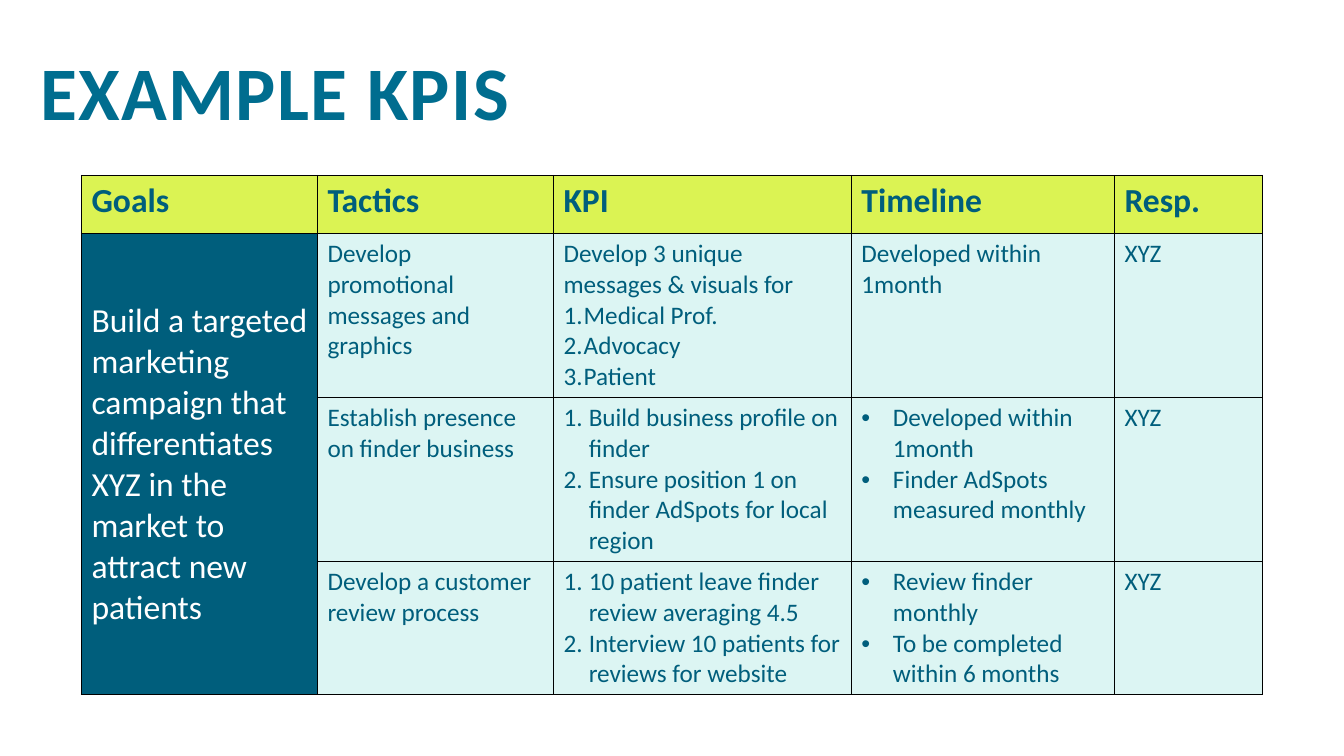
from lxml.etree import SubElement
from pptx import Presentation
from pptx.dml.color import RGBColor
from pptx.enum.text import MSO_ANCHOR as Anchor, MSO_AUTO_SIZE as AutoSize, PP_ALIGN as Align
from pptx.oxml import parse_xml
from pptx.oxml.ns import nsdecls, qn
from pptx.util import Pt

TEAL, DARK_TEAL, LIME, MINT, WHITE = "006D8F", "005E7C", "DBF353", "DCF5F3", "FFFFFF"
COLUMN_WIDTHS = [168.6, 168.6, 212.8, 187.9, 105.7]
ROW_HEIGHTS = [41.6, 117.1, 117.1, 95]
HEADINGS = ["Goals", "Tactics", "KPI", "Timeline", "Resp."]
GOAL = ("Build a targeted marketing campaign that differentiates XYZ "
        "in the market to attract new patients")


def color(value):
    return RGBColor.from_string(value)


def write(paragraph, text, size=18, fill=DARK_TEAL, bold=False, spacing=None):
    run = paragraph.add_run()
    run.text = text
    run.font.name = "Calibri"
    run.font.size = Pt(size)
    run.font.bold = bold
    run.font.color.rgb = color(fill)
    if spacing:
        run.font._element.set("spc", str(spacing * 100))


def add_marker(paragraph, indent, numbered):
    properties = paragraph._p.get_or_add_pPr()
    properties.set("marL", str(Pt(indent)))
    properties.set("indent", str(-Pt(indent)))
    SubElement(properties, qn("a:buFont"), typeface="+mj-lt" if numbered else "Arial")
    if numbered:
        SubElement(properties, qn("a:buAutoNum"), type="arabicPeriod")
    else:
        SubElement(properties, qn("a:buChar"), char="•")


def plain(*texts):
    return [(text, None, False) for text in texts]


def numbers(*texts, indent=18):
    return [(text, indent, True) for text in texts]


def bullets(*texts):
    return [(text, 22.5, False) for text in texts]


def add_borders(cell):
    properties = cell._tc.get_or_add_tcPr()
    for position, side in enumerate(["lnL", "lnR", "lnT", "lnB"]):
        properties.insert(position, parse_xml(
            f'<a:{side} {nsdecls("a")} w="{Pt(1)}"><a:solidFill>'
            f'<a:srgbClr val="000000"/></a:solidFill></a:{side}>'))


def fill_cell(cell, lines, background=MINT, **text_format):
    cell.fill.solid()
    cell.fill.fore_color.rgb = color(background)
    for index, (text, indent, numbered) in enumerate(lines):
        frame = cell.text_frame
        paragraph = frame.add_paragraph() if index else frame.paragraphs[0]
        if indent:
            add_marker(paragraph, indent, numbered)
        write(paragraph, text, **text_format)


def add_title(slide, text):
    title = slide.shapes.title
    title.left, title.top, title.width, title.height = Pt(21.6), Pt(11.5), Pt(765.4), Pt(118)
    frame = title.text_frame
    frame.word_wrap = True
    frame.auto_size = AutoSize.NONE
    frame.vertical_anchor = Anchor.MIDDLE
    paragraph = frame.paragraphs[0]
    paragraph.alignment = Align.LEFT
    paragraph.line_spacing = 0.8
    write(paragraph, text, size=54, fill=TEAL, bold=True, spacing=1)


def add_kpi_table(slide, rows):
    table = slide.shapes.add_table(
        len(ROW_HEIGHTS), len(COLUMN_WIDTHS), Pt(58.2), Pt(125.3),
        Pt(sum(COLUMN_WIDTHS)), Pt(sum(ROW_HEIGHTS))).table
    table.horz_banding = False
    for column, width in zip(table.columns, COLUMN_WIDTHS):
        column.width = Pt(width)
    for row, height in zip(table.rows, ROW_HEIGHTS):
        row.height = Pt(height)
    for column, heading in enumerate(HEADINGS):
        fill_cell(table.cell(0, column), plain(heading), LIME, size=24, bold=True)
    for row, entries in enumerate(rows, 1):
        for column, lines in enumerate(entries, 1):
            fill_cell(table.cell(row, column), lines)
    goal = table.cell(1, 0)
    goal.merge(table.cell(len(rows), 0))
    fill_cell(goal, plain(GOAL), DARK_TEAL, size=24, fill=WHITE)
    goal.vertical_anchor = Anchor.MIDDLE
    for cell in table.iter_cells():
        add_borders(cell)


def main():
    presentation = Presentation()
    presentation.slide_width, presentation.slide_height = Pt(960), Pt(540)
    slide = presentation.slides.add_slide(presentation.slide_layouts[5])
    add_title(slide, "EXAMPLE KPIS")
    add_kpi_table(slide, [
        [plain("Develop promotional messages and graphics"),
         plain("Develop 3 unique messages & visuals for")
         + numbers("Medical Prof.", "Advocacy", "Patient", indent=14.4),
         plain("Developed within 1month"),
         plain("XYZ")],
        [plain("Establish presence on finder business"),
         numbers("Build business profile on finder",
                 "Ensure position 1 on finder AdSpots for local region"),
         bullets("Developed within 1month", "Finder AdSpots measured monthly"),
         plain("XYZ")],
        [plain("Develop a customer review process"),
         numbers("10 patient leave finder review averaging 4.5",
                 "Interview 10 patients for reviews for website"),
         bullets("Review finder monthly", "To be completed within 6 months"),
         plain("XYZ")],
    ])
    presentation.save("out.pptx")


if __name__ == "__main__":
    main()
